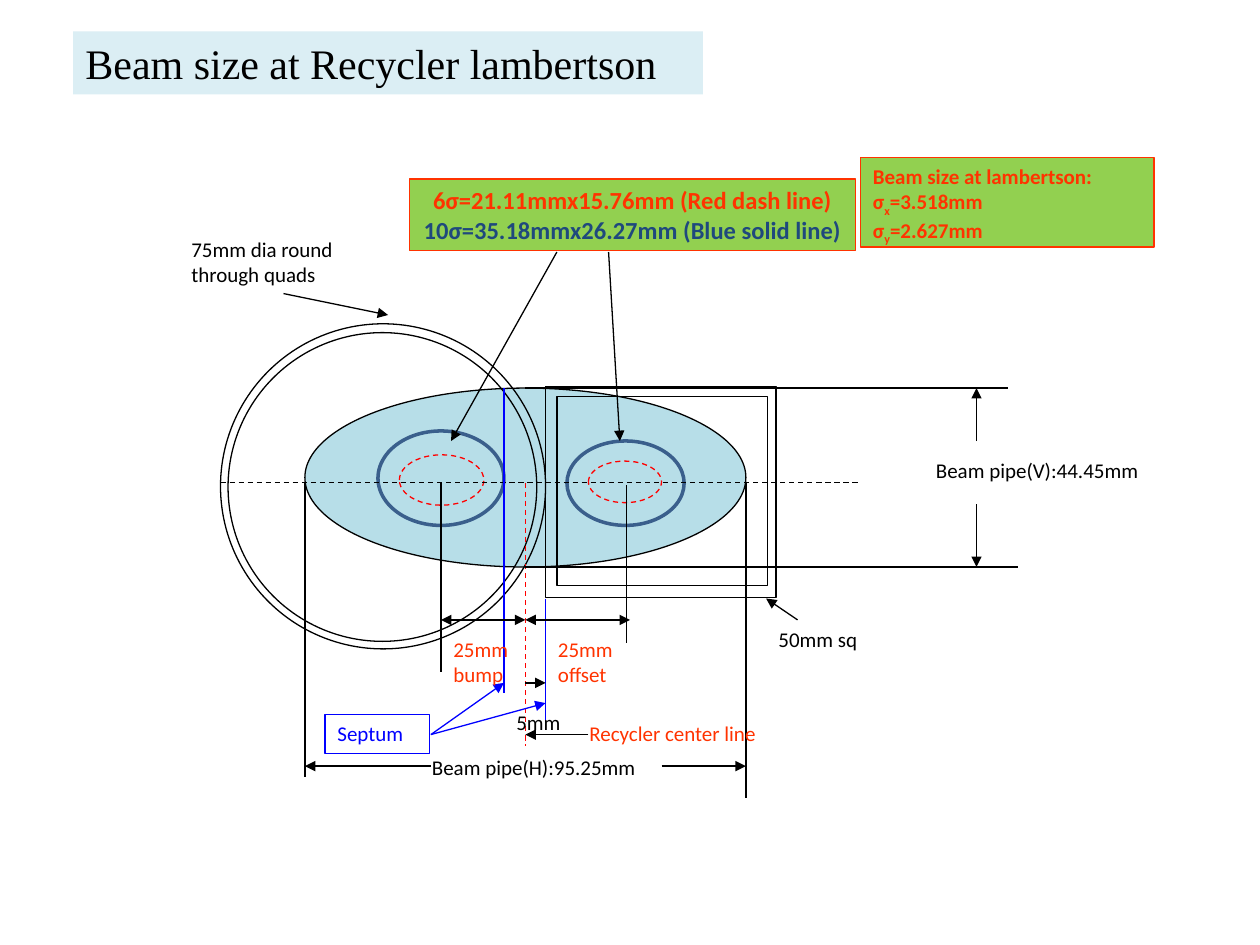
from dataclasses import dataclass

from lxml.etree import SubElement
from pptx import Presentation
from pptx.dml.color import RGBColor
from pptx.enum.dml import MSO_LINE
from pptx.enum.shapes import MSO_CONNECTOR, MSO_SHAPE as SHAPE
from pptx.enum.text import MSO_ANCHOR, MSO_AUTO_SIZE, PP_ALIGN
from pptx.oxml.ns import qn
from pptx.util import Inches, Pt


@dataclass(frozen=True)
class Theme:
    black: RGBColor = RGBColor.from_string("000000")
    red: RGBColor = RGBColor.from_string("FF0000")
    orange: RGBColor = RGBColor.from_string("FF3300")
    blue: RGBColor = RGBColor.from_string("0000FF")
    navy: RGBColor = RGBColor.from_string("1F497D")
    beam: RGBColor = RGBColor.from_string("3A5F8C")
    pipe: RGBColor = RGBColor.from_string("B7DEE8")
    green: RGBColor = RGBColor.from_string("92D050")
    title_fill: RGBColor = RGBColor.from_string("DBEEF4")
    body: str = "Calibri"
    heading: str = "Times New Roman"
    label_size: int = 12
    callout_size: int = 14
    title_size: int = 24
    thin: float = 0.75
    thick: float = 2


theme = Theme()
prs = Presentation()
prs.slide_width, prs.slide_height = Inches(10), Inches(7.5)
slide = prs.slides.add_slide(prs.slide_layouts[6])
shapes = slide.shapes


def add_text(box, paragraphs, color=theme.black, size=theme.label_size, font=theme.body,
             bold=False, wrap=True, align=PP_ALIGN.LEFT, fill=None, border=None):
    """Each paragraph is a string or a list of (text, run options) pairs."""
    place = [Inches(v) for v in box]
    if fill or border:
        holder = shapes.add_shape(SHAPE.RECTANGLE, *place)
        holder.shadow.inherit = False
        for part, tint in ((holder.fill, fill), (holder.line.fill, border)):
            if tint:
                part.solid()
                part.fore_color.rgb = tint
            else:
                part.background()
        if border:
            holder.line.width = Pt(theme.thin)
    else:
        holder = shapes.add_textbox(*place)
    frame = holder.text_frame
    frame.word_wrap = wrap
    frame.auto_size = MSO_AUTO_SIZE.SHAPE_TO_FIT_TEXT
    frame.vertical_anchor = MSO_ANCHOR.TOP
    for i, content in enumerate(paragraphs):
        paragraph = frame.add_paragraph() if i else frame.paragraphs[0]
        paragraph.alignment = align
        for words, options in [(content, {})] if isinstance(content, str) else content:
            run = paragraph.add_run()
            run.text = words
            run.font.name, run.font.size, run.font.bold = font, Pt(size), bold
            run.font.color.rgb = options.get("color", color)
            if options.get("subscript"):
                run._r.get_or_add_rPr().set("baseline", "-25000")


def add_line(start, end, color=theme.black, dashed=False, arrow=False):
    connector = shapes.add_connector(MSO_CONNECTOR.STRAIGHT, *[Inches(v) for v in (*start, *end)])
    connector.line.color.rgb = color
    connector.line.width = Pt(theme.thin)
    if dashed:
        connector.line.dash_style = MSO_LINE.DASH
    properties = connector._element.spPr
    if arrow:
        SubElement(properties.find(qn("a:ln")), qn("a:tailEnd"), type="triangle")
    SubElement(properties, qn("a:effectLst"))


# Reference positions shared by the drawing
pipe_left, pipe_right, pipe_top, pipe_bottom = 2.42, 5.92, 3.08, 4.5
axis_y, center_x = 3.83, 4.17
bump_x, offset_x = 3.5, 4.97
septum_left, septum_right = 4, 4.33
offset_y, pipe_h_y, pipe_v_x = 4.92, 6.08, 7.75

# Beam pipe, quads, square pipe and beam envelopes
outlines = [
    (SHAPE.OVAL, (pipe_left, pipe_top, 3.5, 1.42), theme.black, theme.thin, False, theme.pipe),
    (SHAPE.RECTANGLE, (4.33, 3.07, 1.83, 1.67), theme.black, theme.thin, False, None),
    (SHAPE.RECTANGLE, (4.42, 3.15, 1.67, 1.5), theme.black, theme.thin, False, None),
    (SHAPE.OVAL, (1.75, 2.57, 2.58, 2.58), theme.black, theme.thin, False, None),
    (SHAPE.OVAL, (1.81, 2.64, 2.45, 2.45), theme.black, theme.thin, False, None),
    (SHAPE.OVAL, (3.17, 3.61, 0.67, 0.4), theme.red, theme.thin, True, None),
    (SHAPE.OVAL, (4.67, 3.66, 0.58, 0.33), theme.red, theme.thin, True, None),
    (SHAPE.OVAL, (4.5, 3.5, 0.93, 0.67), theme.beam, theme.thick, False, None),
    (SHAPE.OVAL, (3, 3.42, 1, 0.75), theme.beam, theme.thick, False, None),
]
for kind, box, color, width, dashed, fill in outlines:
    outline = shapes.add_shape(kind, *[Inches(v) for v in box])
    outline.shadow.inherit = False
    outline.line.color.rgb = color
    outline.line.width = Pt(width)
    if dashed:
        outline.line.dash_style = MSO_LINE.DASH
    if fill:
        outline.fill.solid()
        outline.fill.fore_color.rgb = fill
    else:
        outline.fill.background()

# Center lines and septum
add_line((center_x, axis_y), (center_x, 5.92), color=theme.red, dashed=True)
add_line((1.75, axis_y), (6.83, axis_y), dashed=True)
add_line((septum_left, pipe_top), (septum_left, 5.5), color=theme.blue)
add_line((septum_right, 4.75), (septum_right, 5.75), color=theme.blue)

# Extension lines
for start, end in [
    ((pipe_left, axis_y), (pipe_left, 6.17)),
    ((pipe_right, axis_y), (pipe_right, 6.33)),
    ((center_x, pipe_top), (8, pipe_top)),
    ((center_x, pipe_bottom), (8.08, pipe_bottom)),
    ((offset_x, 3.85), (offset_x, 5.1)),
    ((bump_x, axis_y), (bump_x, 5.33)),
]:
    add_line(start, end)

# Dimension arrows and leaders
for start, end in [
    ((center_x, 5.42), (septum_right, 5.42)),
    ((6.33, 4.92), (6.08, 4.75)),
    ((2.25, 2.33), (3.08, 2.5)),
    ((5.25, pipe_h_y), (pipe_right, pipe_h_y)),
    ((3.42, pipe_h_y), (pipe_left, pipe_h_y)),
    ((pipe_v_x, 3.5), (pipe_v_x, pipe_top)),
    ((pipe_v_x, 4), (pipe_v_x, pipe_bottom)),
    ((4.83, 2), (4.92, 3.5)),
    ((4.42, 2), (3.58, 3.5)),
    ((4.67, offset_y), (5, offset_y)),
    ((4.67, offset_y), (center_x, offset_y)),
    ((3.75, offset_y), (bump_x, offset_y)),
    ((3.75, offset_y), (center_x, offset_y)),
    ((4.67, 5.83), (center_x, 5.83)),
]:
    add_line(start, end, arrow=True)
for tip in [(septum_left, 5.42), (septum_right, 5.58)]:
    add_line((3.42, 5.83), tip, color=theme.blue, arrow=True)

# Labels
add_text((4, 5.58, 0.57, 0.3), ["5mm"], wrap=False)
add_text((6.08, 4.92, 0.89, 0.3), ["50mm sq"], wrap=False)
add_text((1.42, 1.83, 1.58, 0.5), ["75mm dia round through quads"])
add_text((3.33, 5.94, 1.97, 0.3), ["Beam pipe(H):95.25mm"], wrap=False)
add_text((7.33, 3.58, 1.96, 0.3), ["Beam pipe(V):44.45mm"], wrap=False)
add_text((4.33, 5, 0.92, 0.5), ["25mm offset"], color=theme.orange)
add_text((3.5, 5, 0.64, 0.5), ["25mm", "bump"], color=theme.orange, wrap=False)
add_text((4.58, 5.67, 1.73, 0.3), ["Recycler center line"], color=theme.orange)
add_text((2.58, 5.67, 0.83, 0.31), ["Septum"], color=theme.blue, border=theme.blue)

# Title and beam size callouts
add_text((0.58, 0.25, 5, 0.5), ["Beam size at Recycler lambertson"],
         size=theme.title_size, font=theme.heading, fill=theme.title_fill)
sigmas = [[("σ", {}), (axis, {"subscript": True}), (f"={value}mm", {})]
          for axis, value in (("x", "3.518"), ("y", "2.627"))]
add_text((6.83, 1.25, 2.33, 0.71), ["Beam size at lambertson:", *sigmas],
         color=theme.orange, bold=True, fill=theme.green, border=theme.orange)
add_text((3.25, 1.42, 3.54, 0.57),
         ["6σ=21.11mmx15.76mm (Red dash line)",
          [("10σ=35.18mmx26.27mm (Blue solid line)", {"color": theme.navy})]],
         color=theme.orange, size=theme.callout_size, bold=True, wrap=False,
         align=PP_ALIGN.CENTER, fill=theme.green, border=theme.orange)

prs.save("out.pptx")
